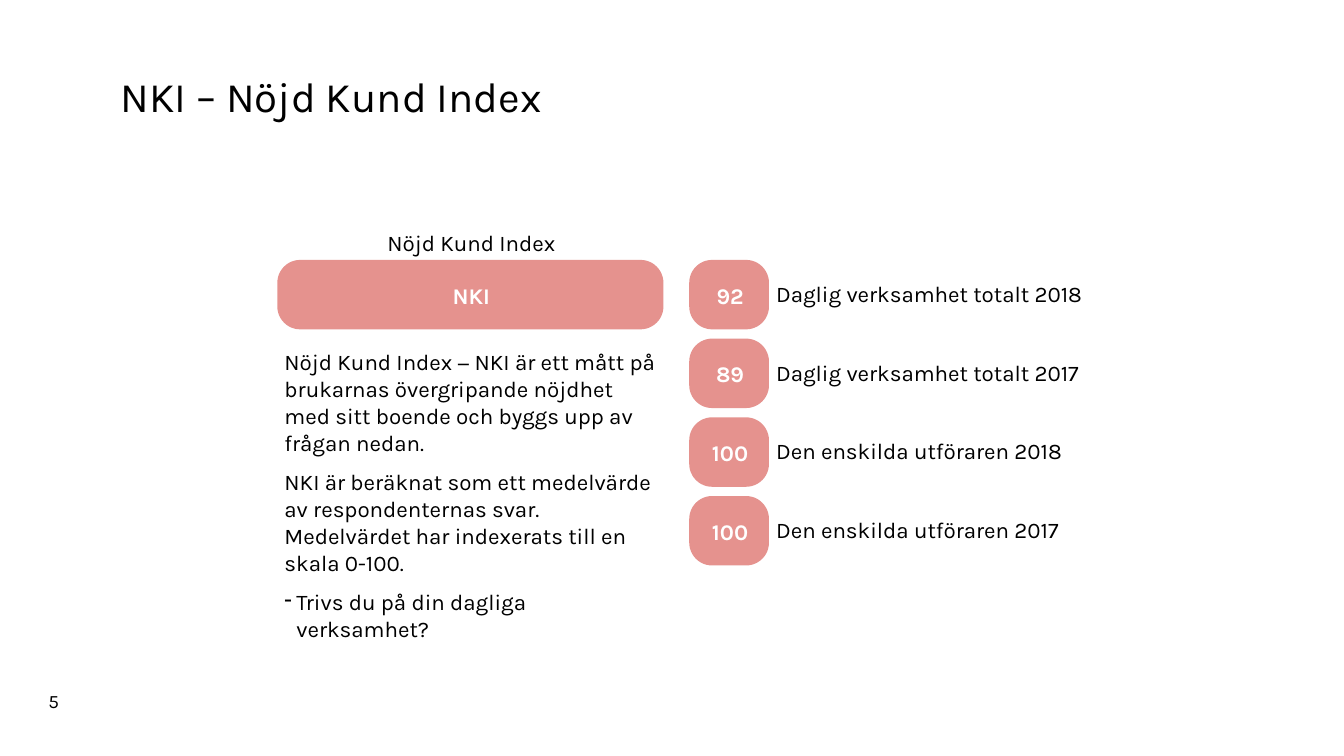
from lxml import etree
from pptx import Presentation
from pptx import util as u
from pptx.dml.color import RGBColor
from pptx.enum import shapes, text
from pptx.oxml.ns import qn

FONT = "Karla"
COLORS = {"text": "000000", "pill": "E5928E", "pill_text": "FFFFFF"}
INSETS = (0.18, 0.13, 0.13, 0.1)

TITLE = "NKI – Nöjd Kund Index"
EXPLANATION = [
    "Nöjd Kund Index − NKI är ett mått på brukarnas övergripande nöjdhet "
    "med sitt boende och byggs upp av frågan nedan.",
    "NKI är beräknat som ett medelvärde av respondenternas svar. "
    "Medelvärdet har indexerats till en skala 0-100.",
]
QUESTION = "Trivs du på din dagliga verksamhet?"
SCORES = [
    (92, "Daglig verksamhet totalt 2018"),
    (89, "Daglig verksamhet totalt 2017"),
    (100, "Den enskilda utföraren 2018"),
    (100, "Den enskilda utföraren 2017"),
]


def rgb(name):
    return RGBColor.from_string(COLORS[name])


def write(p, content, size=16, color="text", bold=False, align="LEFT",
          before=0, line=None, bullet=None):
    """Write one formatted paragraph."""
    if bullet:
        pPr = p._p.get_or_add_pPr()
        pPr.set("marL", str(u.Cm(0.3)))
        pPr.set("indent", str(u.Cm(-0.3)))
        etree.SubElement(pPr, qn("a:buChar")).set("char", bullet)
    p.alignment = text.PP_ALIGN[align]
    p.space_before = u.Pt(before)
    if line:
        p.line_spacing = line
    r = p.add_run()
    r.text = content
    r.font.name, r.font.size, r.font.bold = FONT, u.Pt(size), bold
    r.font.color.rgb = rgb(color)


def set_frame(tf, insets=INSETS, anchor="TOP", wrap=True):
    tf.word_wrap = wrap
    tf.auto_size = text.MSO_AUTO_SIZE.NONE
    tf.vertical_anchor = text.MSO_ANCHOR[anchor]
    tf.margin_left, tf.margin_top, tf.margin_right, tf.margin_bottom = map(u.Cm, insets)


def add_text_box(s, box, **frame):
    tf = s.shapes.add_textbox(*map(u.Cm, box)).text_frame
    set_frame(tf, **frame)
    return tf


def add_pill(s, box, label):
    sp = s.shapes.add_shape(shapes.MSO_SHAPE.ROUNDED_RECTANGLE, *map(u.Cm, box))
    sp.adjustments[0] = 0.33
    sp.shadow.inherit = False
    sp.fill.solid()
    sp.fill.fore_color.rgb = rgb("pill")
    sp.line.fill.background()
    set_frame(sp.text_frame, anchor="MIDDLE")
    write(sp.text_frame.paragraphs[0], label, color="pill_text", bold=True, align="CENTER")


def add_title(s, box):
    title = s.shapes.title
    title.left, title.top, title.width, title.height = map(u.Cm, box)
    set_frame(title.text_frame, (0.25, 0.13, 0.25, 0.13), "BOTTOM")
    write(title.text_frame.paragraphs[0], TITLE, size=30, line=0.9)


def add_explanation(s, box):
    """Heading, index bar and the text that explains the index."""
    x, y, w, h = box
    tf = add_text_box(s, box)
    write(tf.paragraphs[0], "Nöjd Kund Index", align="CENTER")
    for i, content in enumerate(EXPLANATION):
        # The first paragraph leaves room for the bar
        write(tf.add_paragraph(), content, before=9 if i else 66)
    write(tf.add_paragraph(), QUESTION, before=9, bullet="-")
    add_pill(s, (x, y + 0.91, w, 1.75), "NKI")


def add_scores(s, box):
    """Column of score pills with one label per pill."""
    x, y, w, h = box
    pill_w, pill_h = 2.01, 1.75
    pitch = (h - pill_h) / (len(SCORES) - 1)
    tf = add_text_box(s, (x + pill_w, y + 0.38, w - pill_w, h - 0.38))
    for i, (score, label) in enumerate(SCORES):
        add_pill(s, (x, y + i * pitch, pill_w, pill_h), str(score))
        p = tf.add_paragraph() if i else tf.paragraphs[0]
        write(p, label, before=37 if i else 0)


def add_page_number(s, box):
    tf = add_text_box(s, box, insets=(0.25, 0.13, 0.25, 0.13), wrap=False)
    write(tf.paragraphs[0], "5", size=13.5)


def main():
    prs = Presentation()
    prs.slide_width, prs.slide_height = u.Cm(33.87), u.Cm(19.05)
    s = prs.slides.add_slide(prs.slide_layouts[5])
    add_title(s, (2.79, 1.6, 28.91, 1.6))
    add_explanation(s, (6.99, 5.64, 9.73, 10.26))
    add_scores(s, (17.37, 6.55, 12.65, 7.7))
    add_page_number(s, (0.97, 17.25, 1.09, 0.84))
    prs.save("out.pptx")


if __name__ == "__main__":
    main()
